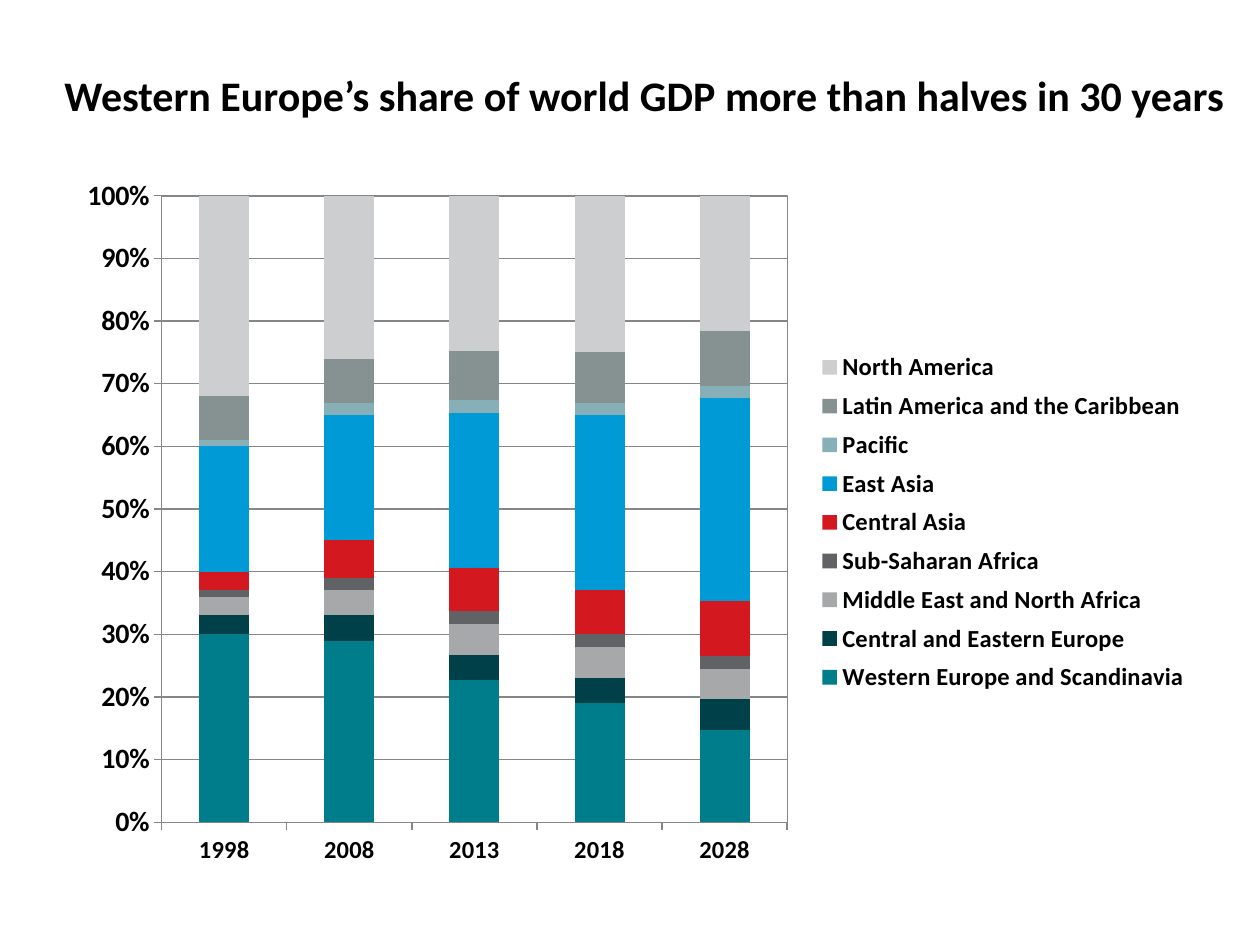
"""Build a slide on the regional shares of world GDP."""
from lxml import etree
from pptx import Presentation
from pptx.chart.data import CategoryChartData
from pptx.dml.color import RGBColor
from pptx.enum.chart import XL_CHART_TYPE, XL_LEGEND_POSITION, XL_TICK_MARK
from pptx.enum.text import MSO_ANCHOR, PP_ALIGN
from pptx.oxml import parse_xml
from pptx.oxml.ns import nsdecls, qn
from pptx.util import Cm, Pt

STACKED = XL_CHART_TYPE.COLUMN_STACKED_100
RIGHT = XL_LEGEND_POSITION.RIGHT
OUTSIDE = XL_TICK_MARK.OUTSIDE
LEFT = PP_ALIGN.LEFT
MIDDLE = MSO_ANCHOR.MIDDLE

FONT = "Calibri"
COLORS = {
    "text": "000000", "line": "868686",
    "teal": "007D8A", "navy": "004048", "grey": "A7A8AA",
    "coal": "616265", "red": "D3191F", "blue": "009BD7",
    "mist": "87AFB7", "slate": "869191", "pale": "CDCED0",
}
YEARS = ["1998", "2008", "2013", "2018", "2028"]
REGIONS = [
    ("Western Europe and Scandinavia", "teal", (30, 29, 23, 19, 15)),
    ("Central and Eastern Europe", "navy", (3, 4, 4, 4, 5)),
    ("Middle East and North Africa", "grey", (3, 4, 5, 5, 5)),
    ("Sub-Saharan Africa", "coal", (1, 2, 2, 2, 2)),
    ("Central Asia", "red", (3, 6, 7, 7, 9)),
    ("East Asia", "blue", (20, 20, 25, 28, 33)),
    ("Pacific", "mist", (1, 2, 2, 2, 2)),
    ("Latin America and the Caribbean", "slate", (7, 7, 8, 8, 9)),
    ("North America", "pale", (32, 26, 25, 25, 22)),
]


def color(key):
    """Return the named colour."""
    return RGBColor.from_string(COLORS[key])


def set_font(font, size):
    """Apply the bold slide font at a size in points."""
    font.name, font.size, font.bold = FONT, Pt(size), True
    font.color.rgb = color("text")


def set_line(line):
    """Apply the thin grey chart line."""
    line.color.rgb = color("line")
    line.width = Pt(0.75)


def add_title(slide, text):
    """Fill and place the title."""
    title = slide.shapes.title
    title.left, title.top = Cm(1.3), Cm(1.3)
    title.width, title.height = Cm(23.6), Cm(1.22)
    frame = title.text_frame
    frame.text = text
    frame.margin_left = frame.margin_right = 0
    frame.margin_top = frame.margin_bottom = 0
    frame.vertical_anchor = MIDDLE
    para = frame.paragraphs[0]
    para.alignment = LEFT
    set_font(para.runs[0].font, 24)


def set_place(part, index, box, inner=False):
    """Give a chart part a manual layout in fractions of the chart."""
    for old in part.findall(qn("c:layout")):
        part.remove(old)
    layout = parse_xml(f"<c:layout {nsdecls('c')}><c:manualLayout/></c:layout>")
    rules = [("layoutTarget", "inner")] if inner else []
    rules += [("xMode", "edge"), ("yMode", "edge"), *zip("xywh", box)]
    for tag, val in rules:
        etree.SubElement(layout[0], qn(f"c:{tag}")).set("val", str(val))
    part.insert(index, layout)


def set_axis(axis, size):
    """Style an axis and its labels."""
    axis.major_tick_mark = OUTSIDE
    set_line(axis.format.line)
    set_font(axis.tick_labels.font, size)


def add_frame(plot):
    """Draw a thin border round the plot area."""
    plot.append(parse_xml(
        f"<c:spPr {nsdecls('c', 'a')}><a:noFill/><a:ln w='9525'><a:solidFill>"
        f"<a:srgbClr val='{COLORS['line']}'/></a:solidFill></a:ln></c:spPr>"))


def add_chart(slide):
    """Add the stacked column chart with its legend."""
    data = CategoryChartData(number_format="0")
    data.categories = YEARS
    for name, _, vals in REGIONS:
        data.add_series(name, vals)
    chart = slide.shapes.add_chart(
        STACKED, Cm(1.3), Cm(3.33), Cm(22.8), Cm(14.4), data).chart
    set_font(chart.font, 10)
    chart.has_title = False

    bars = chart.plots[0]
    bars.gap_width, bars.overlap = 150, 100
    bars.vary_by_categories = False
    for series, (_, key, _) in zip(bars.series, REGIONS):
        series.format.fill.solid()
        series.format.fill.fore_color.rgb = color(key)

    set_axis(chart.category_axis, 14)
    axis = chart.value_axis
    set_axis(axis, 16)
    axis.minimum_scale, axis.maximum_scale, axis.major_unit = 0, 1, 0.1
    axis.tick_labels.number_format = "0%"
    axis.tick_labels.number_format_is_linked = False
    axis.has_major_gridlines = True
    set_line(axis.major_gridlines.format.line)

    chart.has_legend = True
    legend = chart.legend
    legend.position, legend.include_in_layout = RIGHT, False
    set_font(legend.font, 14)
    plot = chart.element.find(f".//{qn('c:plotArea')}")
    set_place(plot, 0, (0.086, 0.043, 0.553, 0.877), inner=True)
    add_frame(plot)
    key = chart.element.find(f".//{qn('c:legend')}")
    set_place(key, 1, (0.66, 0.25, 0.34, 0.5))


def main():
    """Build and save the slide."""
    deck = Presentation()
    deck.slide_width, deck.slide_height = Cm(25.4), Cm(19.05)
    slide = deck.slides.add_slide(deck.slide_layouts[5])
    add_title(
        slide, "Western Europe’s share of world GDP more than halves in 30 years")
    add_chart(slide)
    deck.save("out.pptx")


if __name__ == "__main__":
    main()
